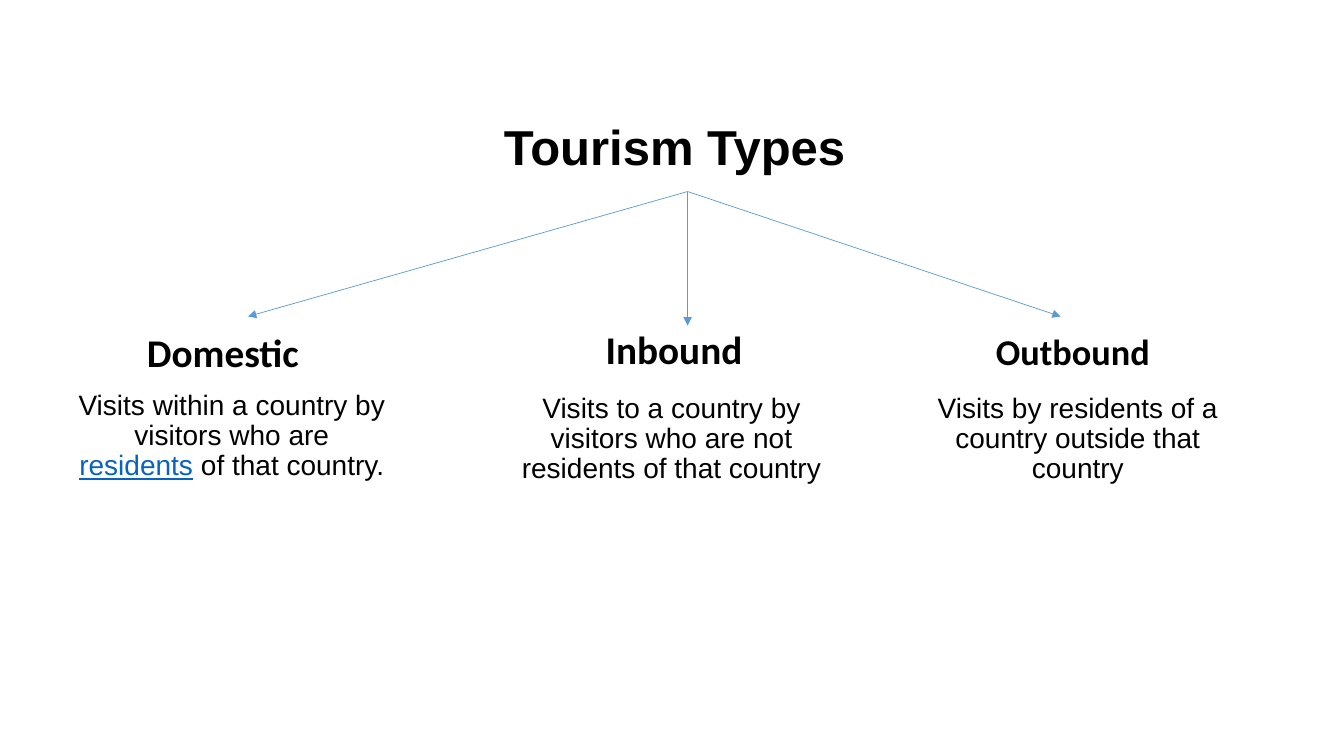
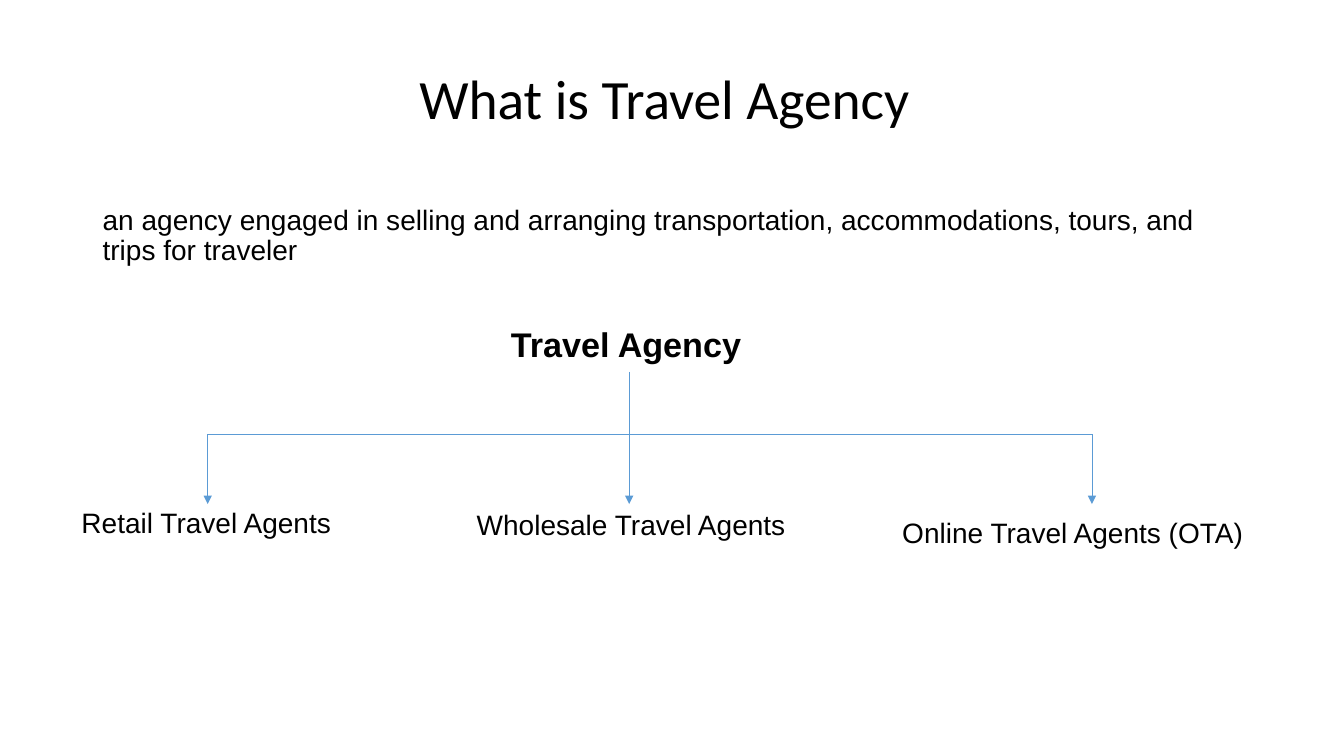
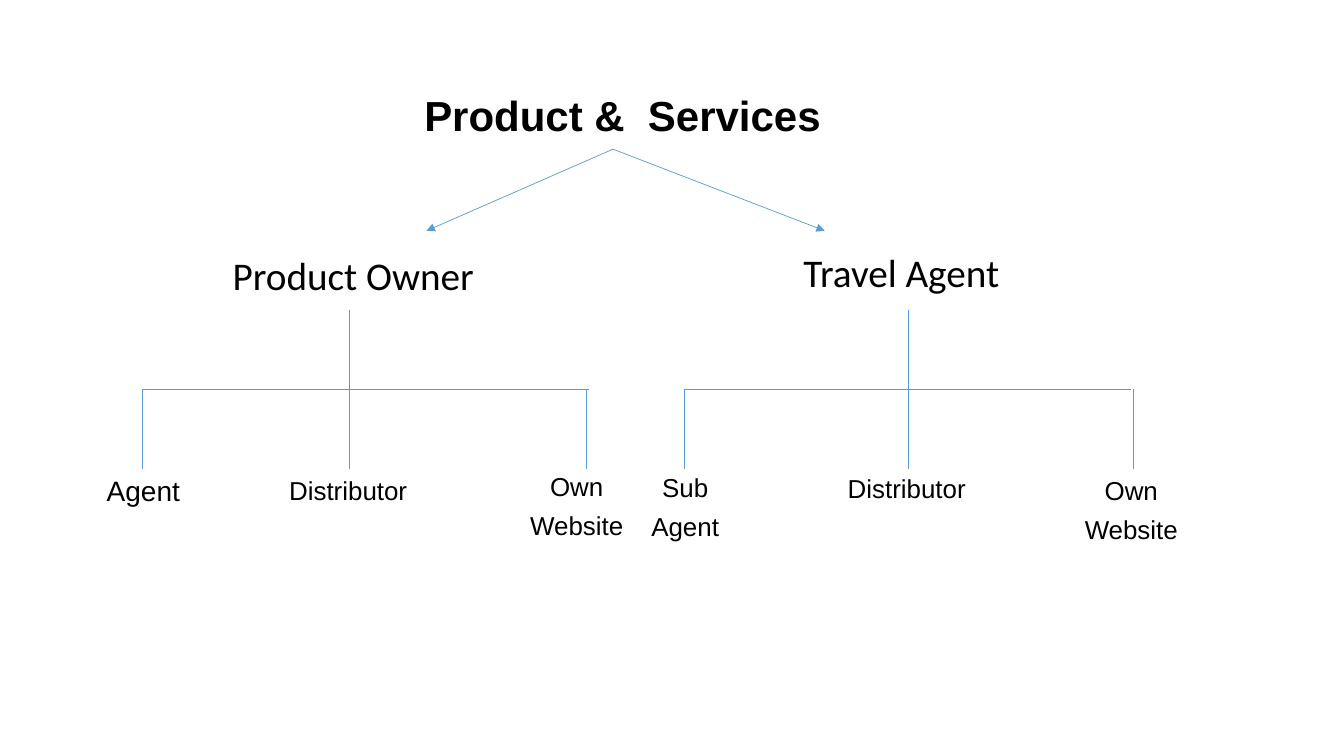
from dataclasses import dataclass

from lxml.etree import SubElement
from pptx import Presentation
from pptx.dml.color import RGBColor
from pptx.enum.shapes import MSO_CONNECTOR
from pptx.enum.text import MSO_ANCHOR, PP_ALIGN
from pptx.oxml.ns import qn
from pptx.util import Pt

PX = 9144  # 100 px to the inch
BLACK = RGBColor(0x00, 0x00, 0x00)
BLUE = RGBColor(0x5B, 0x9B, 0xD5)
LINK_BLUE = RGBColor(0x05, 0x63, 0xC1)
SANS = "Arial"
HEADING_FONT = "Calibri"
LEFT, CENTER = PP_ALIGN.LEFT, PP_ALIGN.CENTER


@dataclass
class Leaf:
    """A label under a tree; left and top are offsets from the end of its drop line."""
    drop: int
    text: str
    left: int
    top: int
    width: int
    height: int
    size: float = 20
    spacing: float = 0.9


def add_text(slide, box, text, *, size=20, font=SANS, bold=False, align=LEFT,
             anchor=MSO_ANCHOR.TOP, spacing=0.9, before=10, link=None):
    """Write text in a box, one paragraph a line; link is a word styled as a link."""
    frame = slide.shapes.add_textbox(*(length * PX for length in box)).text_frame
    frame.word_wrap = True
    frame.vertical_anchor = anchor
    for index, line in enumerate(text.split("\n")):
        para = frame.add_paragraph() if index else frame.paragraphs[0]
        para.alignment = align
        para.line_spacing = spacing
        para.space_before = Pt(before)
        for part in line.partition(link) if link else [line]:
            span = para.add_run()
            span.text = part
            span.font.size = Pt(size)
            span.font.name = font
            span.font.bold = bold
            span.font.underline = part == link
            span.font.color.rgb = LINK_BLUE if part == link else BLACK


def add_title(slide, box, text, **style):
    add_text(slide, box, text, anchor=MSO_ANCHOR.MIDDLE, before=0, **style)


def add_heading(slide, box, text, **style):
    add_text(slide, box, text, font=HEADING_FONT, **{"size": 28, **style})


def add_line(slide, start, end, arrow=False):
    line = slide.shapes.add_connector(
        MSO_CONNECTOR.STRAIGHT, *(length * PX for length in (*start, *end)))
    line.line.color.rgb = BLUE
    line.line.width = Pt(0.5)
    properties = line.element.spPr
    if arrow:
        SubElement(properties.find(qn("a:ln")), qn("a:tailEnd"), type="triangle")
    SubElement(properties, qn("a:effectLst"))


def add_fan(slide, apex, tips):
    for tip in tips:
        add_line(slide, apex, tip, arrow=True)


def add_tree(slide, box, bar, leaves, arrow=False):
    """Draw a stem over the middle leaf, a bar at the given depth, and the leaves."""
    left, top, width, height = box
    stem = left + leaves[1].drop
    add_line(slide, (stem, top), (stem, top + bar))
    add_line(slide, (left, top + bar), (left + width, top + bar))
    for leaf in leaves:
        x, bottom = left + leaf.drop, top + height
        add_line(slide, (x, top + bar), (x, bottom), arrow)
        add_text(slide, (x + leaf.left, bottom + leaf.top, leaf.width, leaf.height),
                 leaf.text, size=leaf.size, spacing=leaf.spacing,
                 align=CENTER if "\n" in leaf.text else LEFT)


def add_type_column(slide, box, indent, gap, heading, text, size=28, link=None):
    """Place a heading, indented, over a centred description that fills the width."""
    left, top, width, height = box
    add_heading(slide, (left + indent, top, 187, 60), heading, size=size, bold=True)
    add_text(slide, (left, top + gap, width, height - gap), text, align=CENTER, link=link)


def build_tourism_types(slide):
    add_title(slide, (490, 107, 385, 83), "Tourism Types", size=35, bold=True)
    add_fan(slide, (682, 190), [(246, 314), (682, 323), (1052, 314)])
    add_type_column(slide, (66, 326, 328, 195), 70, 57, "Domestic",
                    "Visits within a country by visitors who are residents of that country.",
                    link="residents")
    add_type_column(slide, (502, 323, 328, 201), 89, 63, "Inbound",
                    "Visits to a country by visitors who are not residents of that country")
    add_type_column(slide, (905, 327, 328, 197), 73, 59, "Outbound",
                    "Visits by residents of a country outside that country", size=25.9)


def build_travel_agency(slide):
    add_title(slide, (406, 65, 521, 71), "What is Travel Agency",
              size=39.6, font=HEADING_FONT)
    add_text(slide, (92, 200, 1150, 80),
             "an agency engaged in selling and arranging transportation, "
             "accommodations, tours, and trips for traveler")
    add_title(slide, (497, 319, 254, 50), "Travel Agency", size=24.4, bold=True)
    add_tree(slide, (206, 369, 877, 131), 62, [
        Leaf(0, "Retail Travel Agents", -135, 3, 271, 39, spacing=0.8),
        Leaf(418, "Wholesale Travel Agents", -161, 2, 327, 44),
        Leaf(877, "Online Travel Agents (OTA)", -198, 10, 365, 44),
    ], arrow=True)


def build_product_services(slide):
    add_title(slide, (411, 85, 447, 63), "Product &  Services", size=30, bold=True)
    add_fan(slide, (608, 148), [(423, 229), (818, 229)])
    add_heading(slide, (221, 250, 284, 57), "Product Owner")
    add_tree(slide, (141, 308, 443, 157), 78, [
        Leaf(0, "Agent", -45, 4, 115, 43),
        Leaf(206, "Distributor", -70, 4, 144, 43, 18.5),
        Leaf(441, "Own\nWebsite", -82, 3, 144, 75, 18.5, 0.8),
    ])
    add_heading(slide, (787, 247, 284, 57), "Travel Agent")
    add_tree(slide, (679, 308, 443, 157), 78, [
        Leaf(0, "Sub\nAgent", -57, 4, 115, 78, 18.5, 0.8),
        Leaf(222, "Distributor", -70, 2, 144, 43, 18.5),
        Leaf(445, "Own\nWebsite", -74, 7, 144, 75, 18.5, 0.8),
    ])


def main():
    deck = Presentation()
    deck.slide_width, deck.slide_height = 1333 * PX, 750 * PX
    blank = deck.slide_layouts[6]
    for build in (build_tourism_types, build_travel_agency, build_product_services):
        build(deck.slides.add_slide(blank))
    deck.save("out.pptx")


if __name__ == "__main__":
    main()
